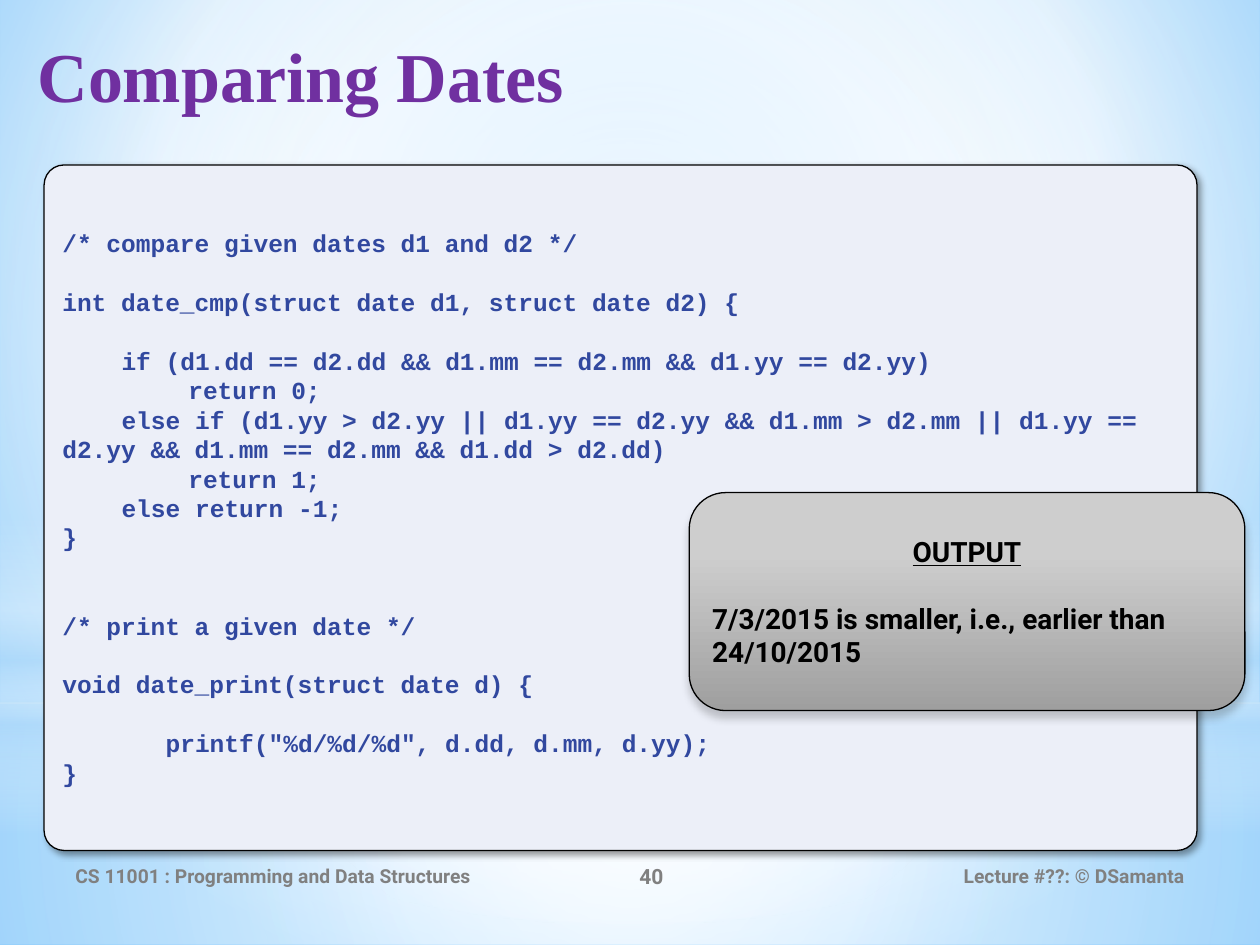
import pptx
import pptx.util
import pptx.dml.color
import pptx.enum.shapes
import pptx.enum.text
import pptx.oxml
import pptx.oxml.ns

Inches, Pt = pptx.util.Inches, pptx.util.Pt
SHAPE = pptx.enum.shapes.MSO_SHAPE
ALIGN = pptx.enum.text.PP_ALIGN
ANCHOR = pptx.enum.text.MSO_ANCHOR
NS = pptx.oxml.ns.nsdecls("a")
qn = pptx.oxml.ns.qn

COLORS = {
    "title": "7030A0", "code": "31489F", "panel": "ECEFF8", "foot": "808080",
    "black": "000000", "white": "FFFFFF", "haze": "B4DCFA",
    "sky": "9ED5FF", "deep": "5BB9FF", "silver": "CECECE", "gray": "9F9F9F",
}
LINE = 16.8  # height of a code line, in points

# (blank lines before, indent of the first line in inches, text)
CODE = [
    (0, 0, "/* compare given dates d1 and d2 */"),
    (1, 0, "int date_cmp(struct date d1, struct date d2) {"),
    (1, 0.47, "if (d1.dd == d2.dd && d1.mm == d2.mm && d1.yy == d2.yy)"),
    (0, 1, "return 0;"),
    (0, 0.47, "else if (d1.yy > d2.yy || d1.yy == d2.yy && d1.mm > d2.mm || "
              "d1.yy == d2.yy && d1.mm == d2.mm && d1.dd > d2.dd)"),
    (0, 1, "return 1;"),
    (0, 0.47, "else return -1;"),
    (0, 0, "}"),
    (2, 0, "/* print a given date */"),
    (1, 0, "void date_print(struct date d) {"),
    (1, 0.82, 'printf("%d/%d/%d", d.dd, d.mm, d.yy);'),
    (0, 0, "}"),
]


def rgb(name):
    return pptx.dml.color.RGBColor.from_string(COLORS[name])


def grad(stops, focus=None):
    """Gradient XML: circular around focus (l, t, r, b), else top to bottom."""
    marks = "".join(
        f'<a:gs pos="{pos * 1000}"><a:srgbClr val="{COLORS[name]}">'
        f'<a:alpha val="{alpha * 1000}"/></a:srgbClr></a:gs>'
        for pos, name, alpha in stops)
    if focus:
        sides = " ".join(f'{k}="{v * 1000}"' for k, v in zip("ltrb", focus))
        way = f'<a:path path="circle"><a:fillToRect {sides}/></a:path>'
    else:
        way = '<a:lin ang="5400000" scaled="0"/>'
    return pptx.oxml.parse_xml(
        f'<a:gradFill {NS} rotWithShape="1"><a:gsLst>{marks}</a:gsLst>{way}</a:gradFill>')


def add_shape(slide, kind, box, fill):
    """Add a borderless shape; fill is a colour name or a gradient."""
    shape = slide.shapes.add_shape(kind, *map(Inches, box))
    shape.shadow.inherit = False
    shape.line.fill.background()
    shape.fill.solid()
    if isinstance(fill, str):
        shape.fill.fore_color.rgb = rgb(fill)
    else:
        props = shape.element.spPr
        props.replace(props.find(qn("a:solidFill")), fill)
    return shape


def add_card(slide, box, fill, shadow):
    """Add an outlined round card; shadow is alpha, blur, distance, angle."""
    card = add_shape(slide, SHAPE.ROUNDED_RECTANGLE, box, fill)
    card.line.color.rgb = rgb("black")
    card.line.width = Pt(0.75)
    alpha, blur, dist, angle = shadow
    card.element.spPr.find(qn("a:effectLst")).append(pptx.oxml.parse_xml(
        f'<a:outerShdw {NS} blurRad="{Pt(blur)}" dist="{Pt(dist)}" '
        f'dir="{angle * 60000}" rotWithShape="0"><a:srgbClr val="{COLORS["black"]}">'
        f'<a:alpha val="{alpha * 1000}"/></a:srgbClr></a:outerShdw>'))
    card.text_frame.word_wrap = True
    card.text_frame.vertical_anchor = ANCHOR.MIDDLE
    return card


def add_line(frame, text, font, size, color, align=ALIGN.LEFT):
    """Write one bold paragraph, using the empty first one if it is free."""
    para = frame.paragraphs[0]
    if para.runs:
        para = frame.add_paragraph()
    para.alignment = align
    run = para.add_run()
    run.text = text
    run.font.name, run.font.size, run.font.bold = font, Pt(size), True
    run.font.color.rgb = rgb(color)
    return para


def add_text(slide, box, anchor, *style):
    frame = slide.shapes.add_textbox(*map(Inches, box)).text_frame
    frame.word_wrap = True
    frame.vertical_anchor = anchor
    add_line(frame, *style)


def add_sky(slide, wide, high):
    """Paint the page background and its four layers of light."""
    slide.background.fill.solid()
    flat = next(slide.element.iter(qn("a:solidFill")))
    flat.getparent().replace(flat, grad(
        [(0, "sky", 100), (60, "white", 100), (100, "deep", 100)], (20, 10, 20, 60)))
    mid = (50, 50, 50, 50)
    split = 5.58
    layers = [
        (SHAPE.RECTANGLE, split, high - split,
         [(0, "white", 91), (37, "white", 76), (100, "haze", 79)], mid),
        (SHAPE.RECTANGLE, 0, split,
         [(0, "white", 89), (48, "white", 62), (100, "haze", 79)], mid),
        (SHAPE.RECTANGLE, 4.12, 2.5,
         [(0, "white", 0), (29, "white", 30), (45, "haze", 40),
          (55, "white", 26), (65, "haze", 60), (100, "white", 0)], None),
        (SHAPE.OVAL, 1.75, split, [(0, "white", 100), (56, "white", 0)], mid),
    ]
    for kind, top, tall, stops, focus in layers:
        add_shape(slide, kind, (0, top, wide, tall), grad(stops, focus))


def add_foot(slide, left, top, high):
    parts = [
        (0, 3.67, "CS 11001 : Programming and Data Structures", 11, ALIGN.LEFT),
        (3.67, 2, "40", 12, ALIGN.CENTER),
        (6.25, 2.75, "Lecture #??: © DSamanta", 11, ALIGN.RIGHT),
    ]
    for shift, wide, text, size, align in parts:
        add_text(slide, (left + shift, top, wide, high), ANCHOR.MIDDLE,
                 text, "Roboto", size, "foot", align)


def add_code(slide, box):
    card = add_card(slide, box, "panel", (40, 4, 3, 45))
    card.adjustments[0] = 0.029
    for blanks, indent, text in CODE:
        para = add_line(card.text_frame, text, "Courier New", 14, "code")
        para.line_spacing = Pt(LINE)
        para.space_before = Pt(blanks * LINE)
        props = para._p.get_or_add_pPr()
        props.set("marL", "0")
        props.set("indent", str(Inches(indent)))


def add_output(slide, box):
    fill = grad([(28, "silver", 100), (100, "gray", 100)])
    frame = add_card(slide, box, fill, (20, 5, 4, 90)).text_frame
    head = add_line(frame, "OUTPUT", "Roboto", 16, "black", ALIGN.CENTER)
    head.runs[0].font.underline = True
    body = add_line(frame, "7/3/2015 is smaller, i.e., earlier than 24/10/2015",
                    "Roboto", 16, "black")
    body.space_before = Pt(19)


def main():
    deck = pptx.Presentation()
    deck.slide_width, deck.slide_height = Inches(10), Inches(7.5)
    slide = deck.slides.add_slide(deck.slide_layouts[6])
    add_sky(slide, 10, 7.5)
    add_text(slide, (0.2, 0.21, 9.53, 1.25), ANCHOR.TOP,
             "Comparing Dates", "Times New Roman", 40, "title")
    add_foot(slide, 0.5, 6.75, 0.4)
    add_code(slide, (0.35, 1.31, 9.15, 5.44))
    add_output(slide, (5.47, 3.91, 4.41, 1.73))
    deck.save("out.pptx")


if __name__ == "__main__":
    main()
